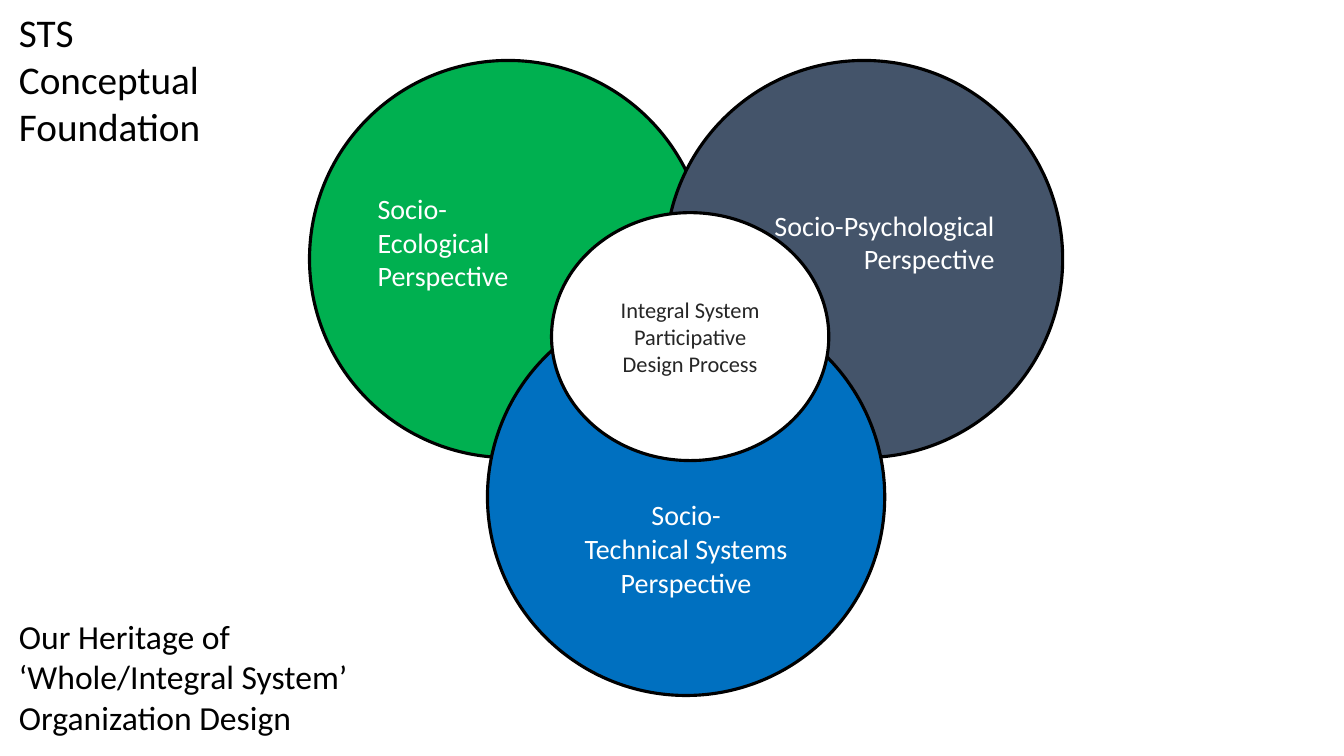
from pptx import Presentation
from pptx.dml.color import RGBColor
from pptx.enum.shapes import MSO_SHAPE
from pptx.enum.text import MSO_ANCHOR, PP_ALIGN
from pptx.util import Inches, Pt

OVAL = MSO_SHAPE.OVAL
TOP, MIDDLE = MSO_ANCHOR.TOP, MSO_ANCHOR.MIDDLE
LEFT, CENTER, RIGHT = PP_ALIGN.LEFT, PP_ALIGN.CENTER, PP_ALIGN.RIGHT

THEME = {
    "font": "Calibri",
    "title": 28, "heritage": 24, "perspective": 20, "core": 16,
    "green": "00B050", "slate": "44546A", "blue": "0070C0",
    "white": "FFFFFF", "black": "000000", "charcoal": "262626",
    "outline": 2.25,
}

TITLE = ["STS", "Conceptual", "Foundation"]
HERITAGE = ["Our Heritage of", "‘Whole/Integral System’", "Organization Design"]
CORE = ["Integral System", "Participative Design Process"]
PERSPECTIVES = [
    {"lines": ["Socio-", "Ecological", "Perspective"], "fill": "green",
     "column": 0, "row": 0, "align": LEFT, "lines_above": 0, "lines_below": 1},
    {"lines": ["Socio-Psychological", "Perspective"], "fill": "slate",
     "column": 2, "row": 0, "align": RIGHT, "lines_above": 0, "lines_below": 1},
    {"lines": ["Socio-\vTechnical Systems Perspective"], "fill": "blue",
     "column": 1, "row": 1, "align": CENTER, "lines_above": 3, "lines_below": 0},
]

DIAMETER = 3.94
VENN_LEFT, VENN_TOP = 3.07, 0.6
STEP_X, STEP_Y = 1.765, 2.36
LINE_HEIGHT = 0.34
INSET_X, INSET_Y = 0.1, 0.05


def color(name):
    return RGBColor.from_string(THEME[name])


def write(box, lines, size, ink, align=LEFT, anchor=TOP, above=0, below=0):
    frame = box.text_frame
    frame.word_wrap = True
    frame.vertical_anchor = anchor
    frame.margin_left = frame.margin_right = Inches(INSET_X)
    frame.margin_top = Inches(INSET_Y + above)
    frame.margin_bottom = Inches(INSET_Y + below)
    for index, line in enumerate(lines):
        para = frame.add_paragraph() if index else frame.paragraphs[0]
        para.text = line
        para.alignment = align
        for span in para.runs:
            span.font.name = THEME["font"]
            span.font.size = Pt(THEME[size])
            span.font.color.rgb = color(ink)


def add_oval(page, left, top, width, height, fill):
    oval = page.shapes.add_shape(
        OVAL, Inches(left), Inches(top), Inches(width), Inches(height))
    oval.shadow.inherit = False
    oval.fill.solid()
    oval.fill.fore_color.rgb = color(fill)
    oval.line.color.rgb = color("black")
    oval.line.width = Pt(THEME["outline"])
    return oval


def main():
    deck = Presentation()
    deck.slide_width, deck.slide_height = Inches(13.33), Inches(7.5)
    page = deck.slides.add_slide(deck.slide_layouts[6])

    for item in PERSPECTIVES:
        circle = add_oval(page, VENN_LEFT + item["column"] * STEP_X,
                          VENN_TOP + item["row"] * STEP_Y,
                          DIAMETER, DIAMETER, item["fill"])
        write(circle, item["lines"], "perspective", "white",
              align=item["align"], anchor=MIDDLE,
              above=item["lines_above"] * LINE_HEIGHT,
              below=item["lines_below"] * LINE_HEIGHT)

    core = add_oval(page, 5.47, 2.11, 2.75, 2.46, "white")
    write(core, CORE, "core", "charcoal", align=CENTER, anchor=MIDDLE)

    heritage = page.shapes.add_textbox(
        Inches(0.09), Inches(6.06), Inches(4.5), Inches(0.5))
    write(heritage, HERITAGE, "heritage", "black")

    title = page.shapes.add_textbox(
        Inches(0.09), Inches(0.03), Inches(13.17), Inches(1.51))
    write(title, TITLE, "title", "black")

    deck.save("out.pptx")


if __name__ == "__main__":
    main()
